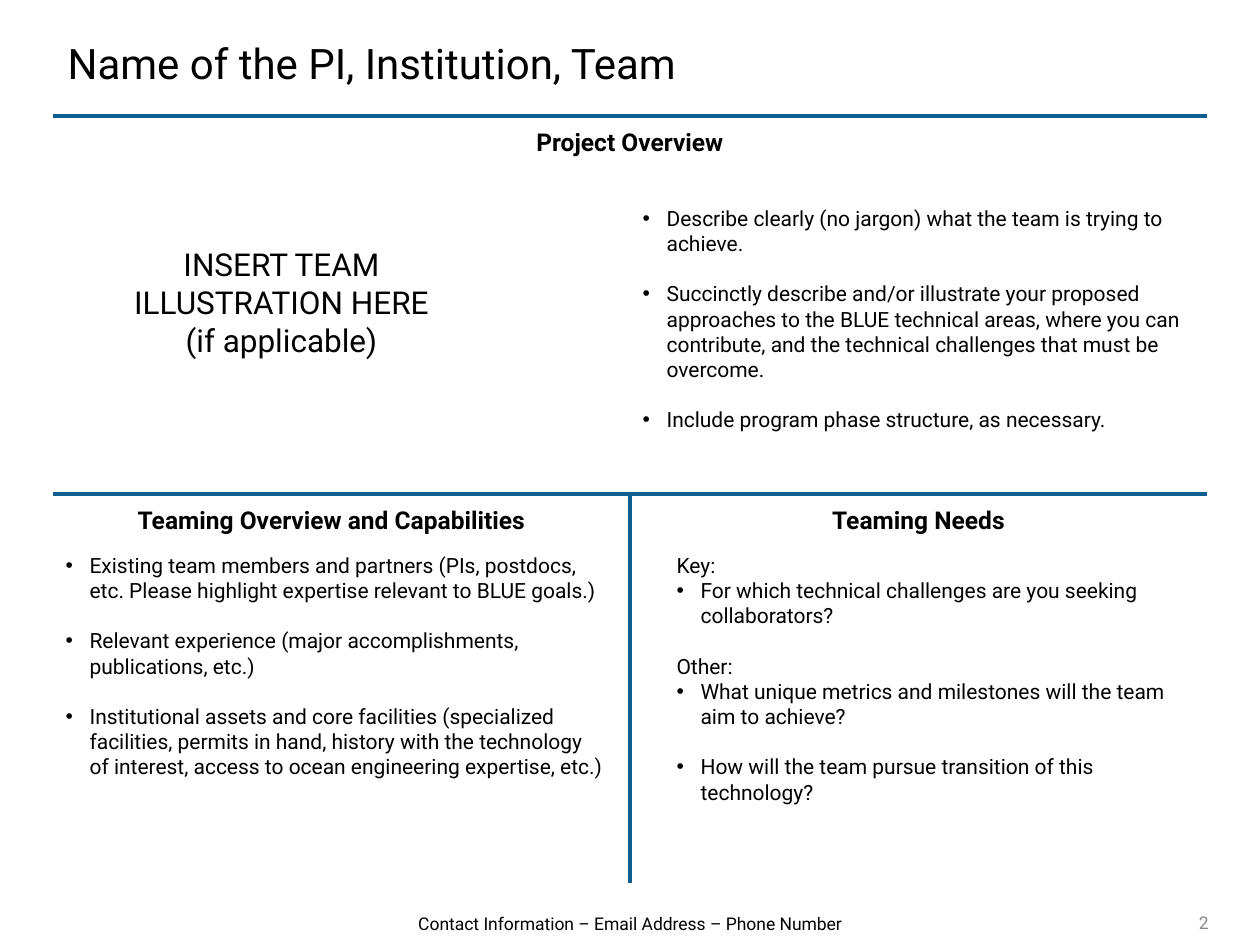
from lxml import etree
from pptx import Presentation
from pptx.dml.color import RGBColor
from pptx.enum.shapes import MSO_CONNECTOR
from pptx.enum.text import MSO_ANCHOR, MSO_AUTO_SIZE, PP_ALIGN
from pptx.oxml.ns import qn
from pptx.util import Emu, Pt

LEFT, CENTER, RIGHT = PP_ALIGN.LEFT, PP_ALIGN.CENTER, PP_ALIGN.RIGHT
TOP, MIDDLE = MSO_ANCHOR.TOP, MSO_ANCHOR.MIDDLE
NO_FIT = MSO_AUTO_SIZE.NONE
STRAIGHT = MSO_CONNECTOR.STRAIGHT

THEME = {
    "font": "Roboto",
    "ink": RGBColor(0x00, 0x00, 0x00),
    "rule": RGBColor(0x0F, 0x5E, 0x90),
    "muted": RGBColor(0x89, 0x89, 0x89),
    "title": Pt(24),
    "illustration": Pt(18),
    "heading": Pt(14),
    "body": Pt(12),
    "footer": Pt(10),
    "gap": Pt(14.4),
    "rule_width": Pt(1.75),
}
PX_PER_INCH = 126
BULLET_INDENT = 24


def px(length):
    return Emu(round(length * 914400 / PX_PER_INCH))


def write(paragraphs, box, holder=None, size="body", color="ink", bold=False,
          align=LEFT, anchor=TOP):
    left, top, width, height = map(px, box)
    if holder is None:
        holder = slide.shapes.add_textbox(left, top, width, height)
    else:
        holder.left, holder.top, holder.width, holder.height = left, top, width, height
    frame = holder.text_frame
    frame.word_wrap = True
    frame.auto_size = NO_FIT
    frame.vertical_anchor = anchor
    for index, (text, bulleted, spaced) in enumerate(paragraphs):
        paragraph = frame.paragraphs[0] if index == 0 else frame.add_paragraph()
        properties = paragraph._p.get_or_add_pPr()
        indent = px(BULLET_INDENT) if bulleted else 0
        properties.set("marL", str(indent))
        properties.set("indent", str(-indent))
        if bulleted:
            etree.SubElement(properties, qn("a:buFont")).set("typeface", "Arial")
            etree.SubElement(properties, qn("a:buChar")).set("char", "•")
        else:
            etree.SubElement(properties, qn("a:buNone"))
        paragraph.alignment = align
        paragraph.space_before = THEME["gap"] if spaced else Pt(0)
        run = paragraph.add_run()
        run.text = text
        run.font.name = THEME["font"]
        run.font.size = THEME[size]
        run.font.bold = bold
        run.font.color.rgb = THEME[color]


deck = Presentation()
deck.slide_width, deck.slide_height = px(1260), px(945)
slide = deck.slides.add_slide(deck.slide_layouts[4])
title, overview, capabilities, illustration, needs = slide.placeholders

EDGE, RIGHT_EDGE, MIDLINE = 53, 1207, 630
TITLE_RULE, LOWER_RULE, DIVIDER_END = 116, 494, 883

for start_x, start_y, end_x, end_y in [
    (EDGE, TITLE_RULE, RIGHT_EDGE, TITLE_RULE),
    (MIDLINE, LOWER_RULE, MIDLINE, DIVIDER_END),
    (EDGE, LOWER_RULE, RIGHT_EDGE, LOWER_RULE),
]:
    rule = slide.shapes.add_connector(
        STRAIGHT, px(start_x), px(start_y), px(end_x), px(end_y))
    rule.line.color.rgb = THEME["rule"]
    rule.line.width = THEME["rule_width"]
    etree.SubElement(rule._element.spPr, qn("a:effectLst"))

write([("Name of the PI, Institution, Team", False, False)],
      (55, 21, 984, 84), title, size="title", anchor=MIDDLE)

for heading, box in [
    ("Project Overview", (315, 121, 630, 43)),
    ("Teaming Overview and Capabilities", (77, 499, 509, 43)),
    ("Teaming Needs", (664, 499, 509, 43)),
]:
    write([(heading, False, False)], box, size="heading", bold=True, align=CENTER)

write([
    ("INSERT TEAM ILLUSTRATION HERE", False, False),
    ("(if applicable)", False, False),
], (77, 239, 409, 127), illustration, size="illustration", align=CENTER)

write([
    ("Describe clearly (no jargon) what the team is trying to achieve.", True, False),
    ("Succinctly describe and/or illustrate your proposed approaches to the BLUE "
     "technical areas, where you can contribute, and the technical challenges that "
     "must be overcome.", True, True),
    ("Include program phase structure, as necessary.", True, True),
], (630, 199, 578, 242), overview)

write([
    ("Existing team members and partners (PIs, postdocs, etc. Please highlight "
     "expertise relevant to BLUE goals.)", True, False),
    ("Relevant experience (major accomplishments, publications, etc.)", True, True),
    ("Institutional assets and core facilities (specialized facilities, permits in "
     "hand, history with the technology of interest, access to ocean engineering "
     "expertise, etc.)", True, True),
], (53, 546, 567, 292), capabilities)

write([
    ("Key:", False, False),
    ("For which technical challenges are you seeking collaborators?", True, False),
    ("Other:", False, True),
    ("What unique metrics and milestones will the team aim to achieve?", True, False),
    ("How will the team pursue transition of this technology?", True, True),
], (664, 546, 543, 267), needs)

write([("Contact Information – Email Address – Phone Number", False, False)],
      (184, 902, 892, 42), size="footer", align=CENTER, anchor=MIDDLE)
write([("2", False, False)], (1116, 903, 105, 40),
      size="footer", color="muted", align=RIGHT, anchor=MIDDLE)

deck.save("out.pptx")
